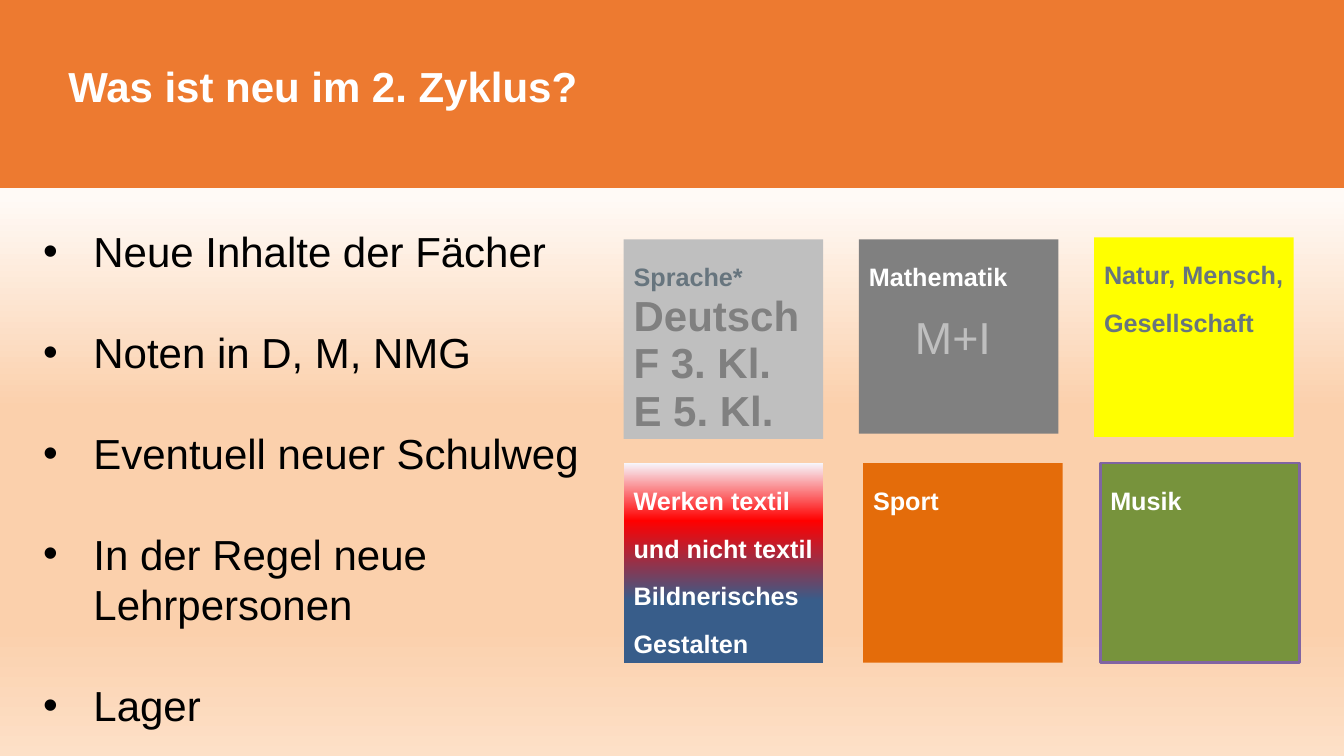
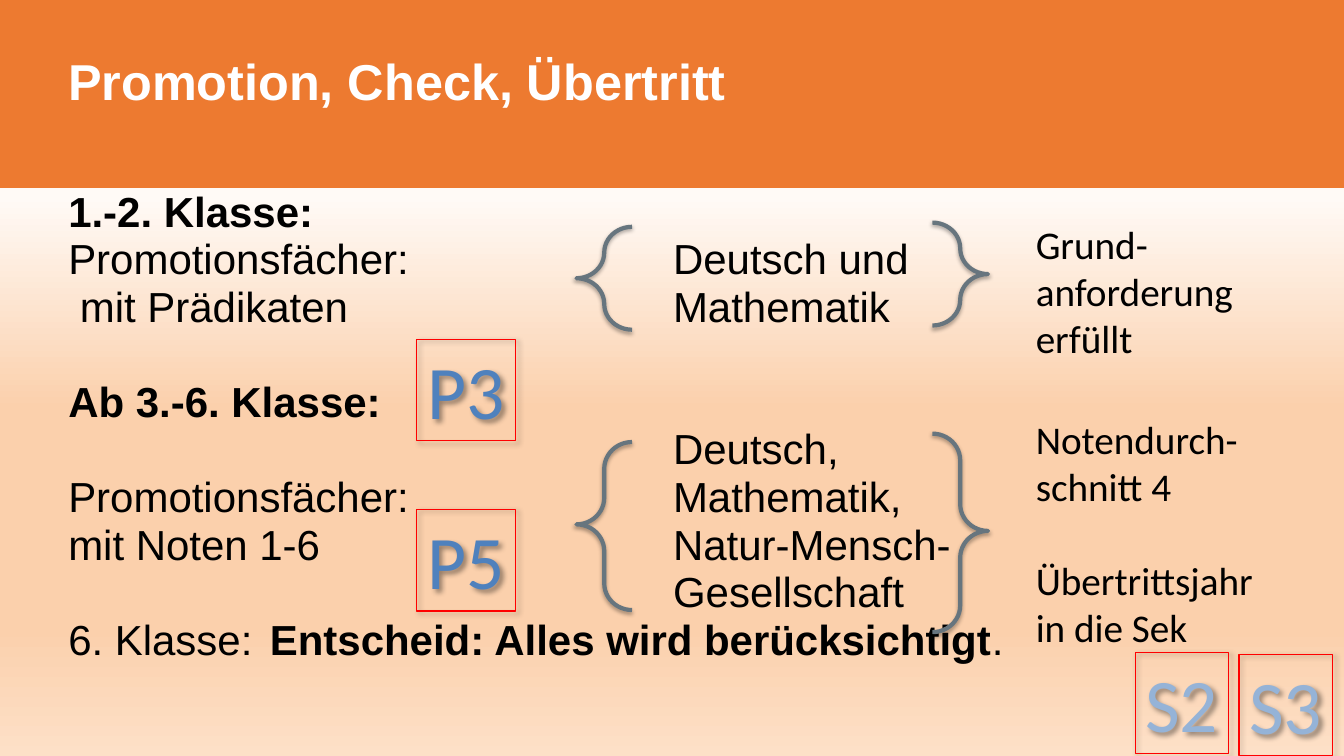
"""Build two slides on the second school cycle: subjects and promotion rules."""
from lxml import etree
from pptx import Presentation
from pptx import util as u
from pptx.dml.color import RGBColor
from pptx.enum import shapes, text
from pptx.oxml.ns import qn

PX = 9525
BLACK = RGBColor(0x00, 0x00, 0x00)
WHITE = RGBColor(0xFF, 0xFF, 0xFF)
ORANGE = RGBColor(0xED, 0x7A, 0x30)
CREAM = RGBColor(0xFF, 0xFA, 0xF6)
PEACH = RGBColor(0xFB, 0xD0, 0xAC)
LIGHT_PEACH = RGBColor(0xFD, 0xE0, 0xC7)
SLATE = RGBColor(0x67, 0x75, 0x7E)
SILVER = RGBColor(0xBF, 0xBF, 0xBF)
GREY = RGBColor(0x80, 0x80, 0x80)
YELLOW = RGBColor(0xFF, 0xFF, 0x00)
LILAC = RGBColor(0xF7, 0xF6, 0xFC)
RED = RGBColor(0xFF, 0x00, 0x00)
NAVY = RGBColor(0x38, 0x5D, 0x8A)
DARK_ORANGE = RGBColor(0xE4, 0x6C, 0x0A)
GREEN = RGBColor(0x77, 0x93, 0x3C)
PURPLE = RGBColor(0x80, 0x64, 0xA2)
BLUE = RGBColor(0x4F, 0x81, 0xBD)
LIGHT_BLUE = RGBColor(0x95, 0xB3, 0xD7)
PAGE_STOPS = [(26, CREAM), (54, PEACH), (83, PEACH), (100, LIGHT_PEACH)]
CRAFT_STOPS = [(0, LILAC), (29, RED), (69, NAVY), (100, NAVY)]
RECTANGLE = shapes.MSO_SHAPE.RECTANGLE
LEFT_BRACE = shapes.MSO_SHAPE.LEFT_BRACE


def place(page, kind, at, fill=None, line=None, shadow=None):
    """Add a preset shape with optional fill, (colour, width) line and shadow."""
    shape = page.shapes.add_shape(kind, *[n * PX for n in at])
    shape.shadow.inherit = False
    if fill is None:
        shape.fill.background()
    else:
        shape.fill.solid()
        shape.fill.fore_color.rgb = fill
    if line is None:
        shape.line.fill.background()
    else:
        shape.line.color.rgb = line[0]
        shape.line.width = u.Pt(line[1])
    if shadow:
        alpha, blur, distance, angle = shadow
        effects = shape.element.spPr.find(qn("a:effectLst"))
        outer = etree.SubElement(effects, qn("a:outerShdw"), blurRad=str(u.Pt(blur)),
                                 dist=str(u.Pt(distance)), dir=str(angle * 60000), rotWithShape="0")
        colour = etree.SubElement(outer, qn("a:srgbClr"), val=str(BLACK))
        etree.SubElement(colour, qn("a:alpha"), val=str(alpha * 1000))
    return shape


def write(box, lines, pitch=None, font="Arial", inset=None):
    """Fill a box with paragraphs, each a list of (words, size, colour, bold)."""
    frame = box.text_frame
    frame.word_wrap = True
    frame.vertical_anchor = text.MSO_ANCHOR.TOP
    if inset is not None:
        frame.margin_left = frame.margin_top = frame.margin_right = frame.margin_bottom = inset
    for index, runs in enumerate(lines):
        para = frame.add_paragraph() if index else frame.paragraphs[0]
        para.alignment = text.PP_ALIGN.LEFT
        if pitch:
            para.line_spacing = u.Pt(pitch)
        for words, size, colour, bold in runs:
            span = para.add_run()
            span.text = words
            span.font.name = font
            span.font.size = u.Pt(size)
            span.font.color.rgb = colour
            span.font.bold = bold
    return frame


deck = Presentation()
deck.slide_width, deck.slide_height = 1280 * PX, 720 * PX
gradients = [(deck.slide_master.background.fill, deck.slide_master.element, PAGE_STOPS)]

pages = []
for heading, size in [("Was ist neu im 2. Zyklus?", 30), ("Promotion, Check, Übertritt", 36)]:
    page = deck.slides.add_slide(deck.slide_layouts[6])
    place(page, RECTANGLE, (0, 0, 1280, 179), ORANGE)
    title = page.shapes.add_textbox(65 * PX, 60 * PX, 796 * PX, 46 * PX)
    write(title, [[(heading, size, WHITE, True)]], 34, inset=0)
    pages.append(page)
news, promotion = pages

points = ["Neue Inhalte der Fächer", "Noten in D, M, NMG", "Eventuell neuer Schulweg",
          "In der Regel neue Lehrpersonen", "Lager"]
body = news.shapes.add_textbox(41 * PX, 215 * PX, 529 * PX, 446 * PX)
frame = write(body, [[(point, 30, BLACK, False)] for point in points], 36, inset=0)
for index, para in enumerate(frame.paragraphs):
    if index:
        para.space_before = u.Pt(36)
    props = para._p.get_or_add_pPr()
    props.set("marL", str(48 * PX))
    props.set("indent", str(-48 * PX))
    etree.SubElement(props, qn("a:buFont"), typeface="Arial")
    etree.SubElement(props, qn("a:buChar"), char="•")

tiles = [
    ((594, 228, 190, 190), SILVER, None, SLATE, ["Sprache*"], ["Deutsch", "F 3. Kl.", "E 5. Kl."]),
    ((818, 228, 190, 185), GREY, None, WHITE, ["Mathematik"], []),
    ((1042, 226, 190, 190), YELLOW, None, SLATE, ["Natur, Mensch, Gesellschaft"], []),
    ((594, 441, 190, 190), NAVY, None, WHITE,
     ["Werken textil und nicht textil", "Bildnerisches Gestalten"], []),
    ((822, 441, 190, 190), DARK_ORANGE, None, WHITE, ["Sport"], []),
    ((1048, 441, 190, 190), GREEN, (PURPLE, 2), WHITE, ["Musik"], []),
]
for at, fill, line, colour, subjects, languages in tiles:
    tile = place(news, RECTANGLE, at, fill, line)
    lines = [[(subject, 18, colour, True)] for subject in subjects]
    lines += [[(language, 30, GREY, True)] for language in languages]
    write(tile, lines, 34).margin_right = 0
    if fill == NAVY:
        gradients.append((tile.fill, tile.element, CRAFT_STOPS))

informatics = news.shapes.add_textbox(862 * PX, 290 * PX, 117 * PX, 61 * PX)
write(informatics, [[("M+I", 32, SILVER, False)]])

for fill, owner, stops in gradients:
    fill.gradient()
    fill.gradient_angle = 270
    stop_list = owner.find(".//" + qn("a:gsLst"))
    for stop in list(stop_list):
        stop_list.remove(stop)
    for position, colour in stops:
        stop = etree.SubElement(stop_list, qn("a:gs"), pos=str(position * 1000))
        etree.SubElement(stop, qn("a:srgbClr"), val=str(colour))

rules = [
    [("1.-2. Klasse:", True)],
    [("Promotionsfächer:\tDeutsch und", False)],
    [(" mit Prädikaten\tMathematik", False)],
    [("Ab 3.-6. Klasse:", True)],
    [("\t\tDeutsch,", False)],
    [("Promotionsfächer:\tMathematik,", False)],
    [("mit Noten 1-6\tNatur-Mensch-", False)],
    [("\t\tGesellschaft", False)],
    [("6. Klasse:\t", False), ("Entscheid: Alles wird berücksichtigt", True), (".", False)],
]
body = promotion.shapes.add_textbox(65 * PX, 179 * PX, 1149 * PX, 446 * PX)
frame = write(body, [[(words, 30, BLACK, bold) for words, bold in rule] for rule in rules],
              34, inset=0)
frame.paragraphs[3].space_before = u.Pt(34)
for para in frame.paragraphs:
    tabs = etree.SubElement(para._p.get_or_add_pPr(), qn("a:tabLst"))
    for stop in (192, 576):
        etree.SubElement(tabs, qn("a:tab"), pos=str(stop * PX), algn="l")

braces = [
    ((549, 216, 53, 98), 0, 0.5), ((549, 421, 53, 160), 0, 0.49),
    ((888, 212, 53, 98), 180, 0.5), ((888, 413, 53, 189), 180, 0.51),
]
for at, rotation, tip in braces:
    brace = place(promotion, LEFT_BRACE, at, line=(SLATE, 3), shadow=(35, 3.1, 1.8, 90))
    brace.rotation = rotation
    brace.adjustments[0] = 0.48
    brace.adjustments[1] = tip

outcomes = ["Grund-anforderung erfüllt", "Notendurch-schnitt 4", "Übertrittsjahr in die Sek"]
column = promotion.shapes.add_textbox(977 * PX, 205 * PX, 238 * PX, 423 * PX)
frame = write(column, [[(outcome, 28, BLACK, False)] for outcome in outcomes], 33.6, "Calibri")
for para, gap in zip(frame.paragraphs[1:], (38.6, 33.6)):
    para.space_before = u.Pt(gap)

badges = [
    ("P3", (397, 323, 94, 97), BLUE), ("P5", (397, 485, 94, 97), BLUE),
    ("S2", (1081, 621, 89, 97), LIGHT_BLUE), ("S3", (1180, 623, 89, 97), LIGHT_BLUE),
]
for label, at, colour in badges:
    badge = place(promotion, RECTANGLE, at, line=(RED, 0.75), shadow=(40, 4, 3, 45))
    frame = write(badge, [[(label, 54, colour, False)]], font="Calibri")
    frame.word_wrap = False
    frame.paragraphs[0].alignment = text.PP_ALIGN.CENTER

deck.save("out.pptx")
